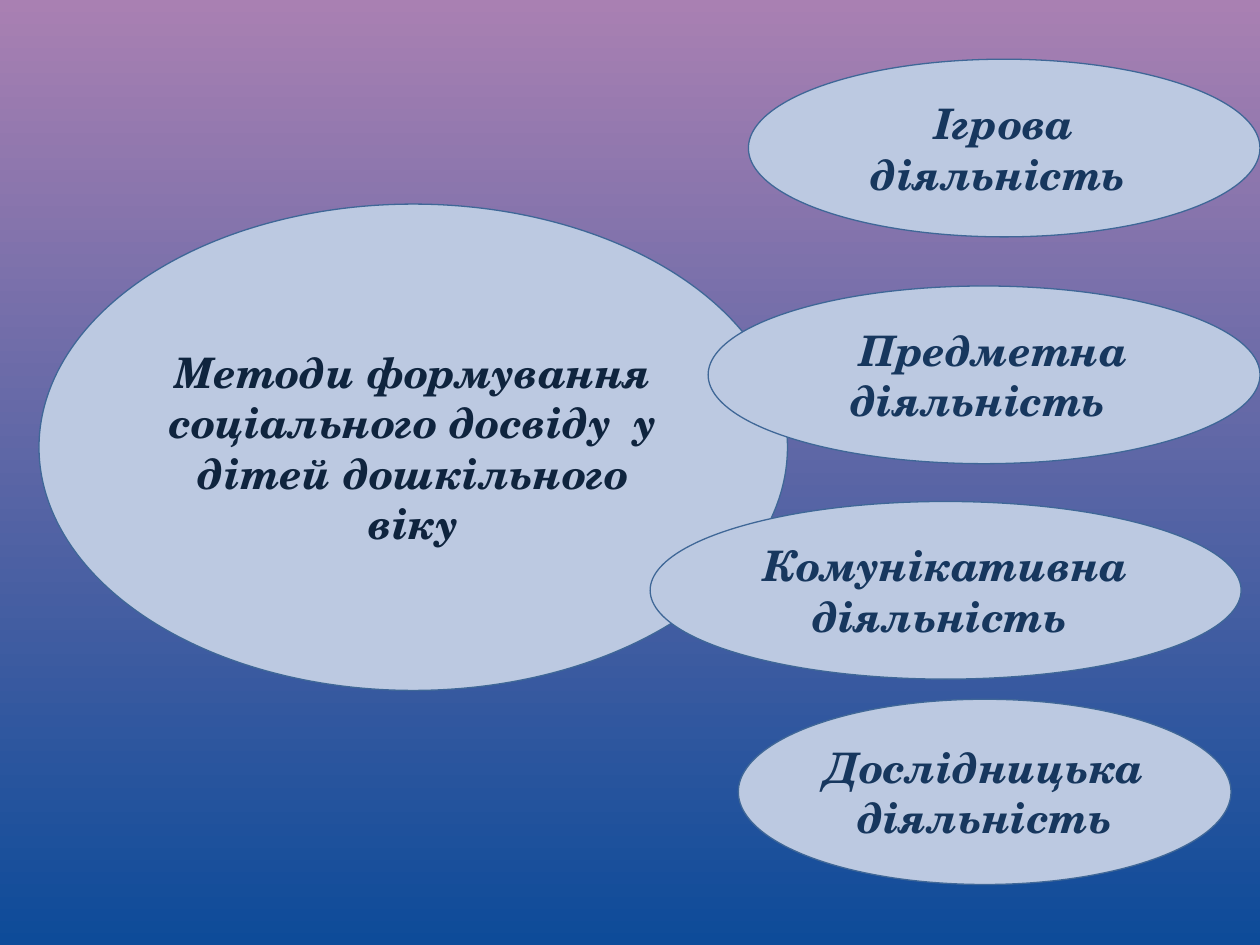
from pptx import Presentation
from pptx.dml.color import RGBColor
from pptx.enum.shapes import MSO_SHAPE
from pptx.enum.text import MSO_ANCHOR, PP_ALIGN
from pptx.util import Pt

ELLIPSE = MSO_SHAPE.OVAL
MIDDLE = MSO_ANCHOR.MIDDLE
CENTER = PP_ALIGN.CENTER
BLANK_LAYOUT = 6

MAUVE = RGBColor(0xA9, 0x80, 0xB2)
DEEP_BLUE = RGBColor(0x0D, 0x4B, 0x99)
PALE_BLUE = RGBColor(0xBC, 0xC9, 0xE1)
OUTLINE = RGBColor(0x3F, 0x67, 0x97)
NAVY = RGBColor(0x17, 0x37, 0x5E)
DARK_NAVY = RGBColor(0x0F, 0x24, 0x3E)
BLACK = RGBColor(0, 0, 0)

# Font name, size, bold italic, colour
TOPIC = ("TeX Gyre Schola", 24, True, DARK_NAVY)
ACTIVITY = ("TeX Gyre Schola", 24, True, NAVY)
SPACER = ("Calibri", 18, False, BLACK)

# (left, top, width, height) in points, then paragraphs made of (text, style) runs
ELLIPSES = [
    ((421.92, 399.6, 281.52, 105.84),
     [[("Дослідницька ", ACTIVITY)], [("діяльність", ACTIVITY)]]),
    ((22.32, 116.64, 427.68, 277.92),
     [[("Методи формування соціального досвіду  у дітей дошкільного віку", TOPIC)]]),
    ((427.68, 33.84, 292.32, 101.52),
     [[("Ігрова діяльність ", ACTIVITY)]]),
    ((404.64, 163.44, 315.36, 101.52),
     [[(" ", SPACER), (" Предметна діяльність ", ACTIVITY)]]),
    ((371.52, 286.56, 337.68, 101.52),
     [[("Комунікативна діяльність ", ACTIVITY)]]),
]


def paint_background(slide):
    fill = slide.background.fill
    fill.gradient()
    fill.gradient_angle = 270
    for stop, color in zip(fill.gradient_stops, (MAUVE, DEEP_BLUE)):
        stop.color.rgb = color


def add_run(paragraph, text, style):
    run = paragraph.add_run()
    run.text = text
    font = run.font
    font.name, size, emphasis, font.color.rgb = style
    font.size = Pt(size)
    font.bold = font.italic = emphasis


def add_ellipse(slide, box, paragraphs):
    shape = slide.shapes.add_shape(ELLIPSE, *map(Pt, box))
    shape.shadow.inherit = False
    shape.fill.solid()
    shape.fill.fore_color.rgb = PALE_BLUE
    shape.line.color.rgb = OUTLINE
    shape.line.width = Pt(0.75)
    text_frame = shape.text_frame
    text_frame.word_wrap = True
    text_frame.vertical_anchor = MIDDLE
    for index, runs in enumerate(paragraphs):
        paragraph = text_frame.add_paragraph() if index else text_frame.paragraphs[0]
        paragraph.alignment = CENTER
        for text, style in runs:
            add_run(paragraph, text, style)


def main():
    presentation = Presentation()
    presentation.slide_width = Pt(720)
    presentation.slide_height = Pt(540)
    slide = presentation.slides.add_slide(presentation.slide_layouts[BLANK_LAYOUT])
    paint_background(slide)
    for box, paragraphs in ELLIPSES:
        add_ellipse(slide, box, paragraphs)
    presentation.save("out.pptx")


if __name__ == "__main__":
    main()
